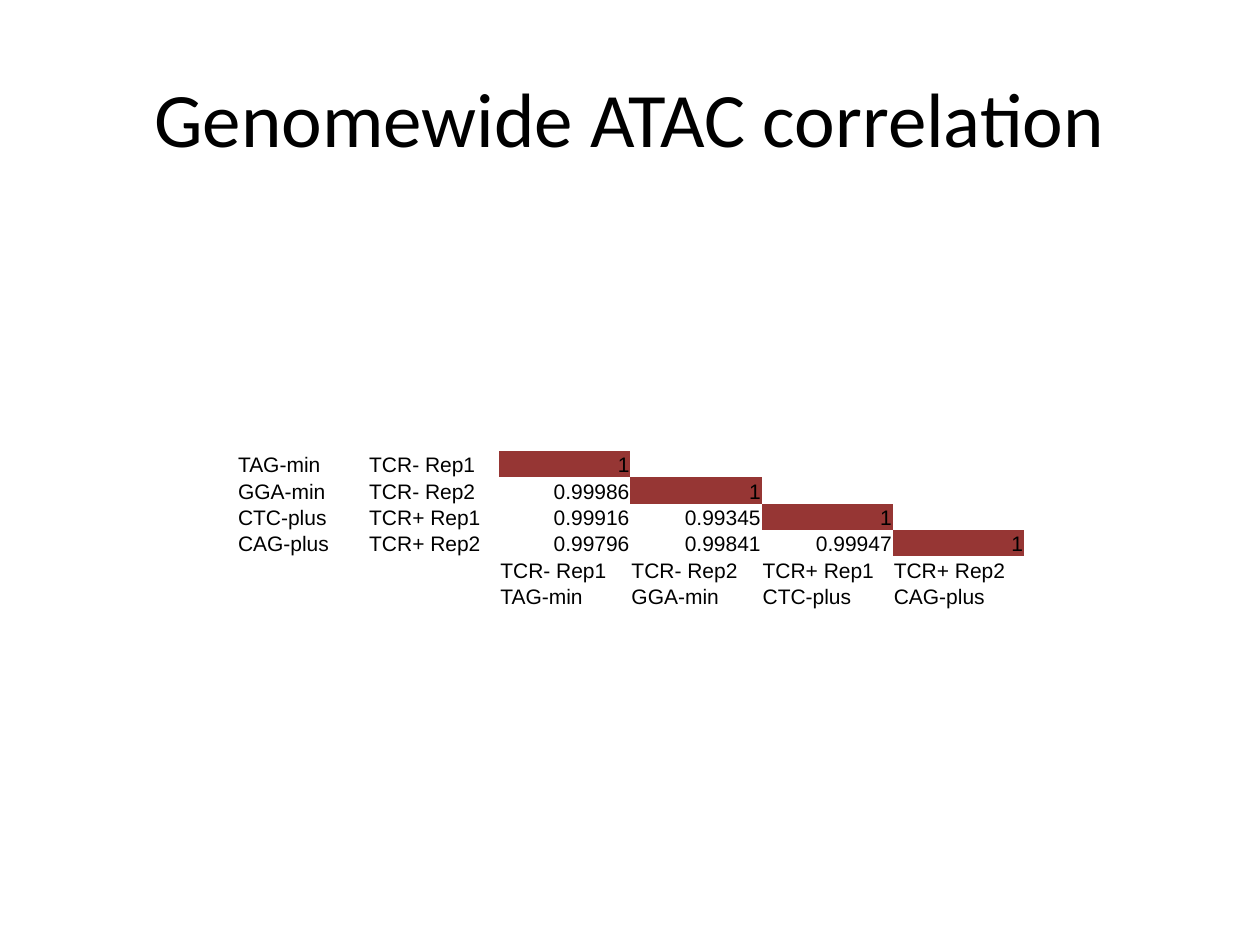
from lxml.etree import SubElement
from pptx import Presentation
from pptx.dml.color import RGBColor
from pptx.enum.text import MSO_ANCHOR as Anchor, PP_ALIGN as Align
from pptx.oxml.ns import qn
from pptx.util import Pt

PX = 914400 // 126
COLORS = {"text": "000000", "diagonal": "963634"}
NO_STYLE_NO_GRID = "{2D5ABB26-0587-4C30-8999-92F81FD0307C}"


def write(frame, text, size, font, align=Align.LEFT):
    para = frame.paragraphs[0]
    para.alignment = align
    span = para.add_run()
    span.text = text
    span.font.size = Pt(size)
    span.font.name = font
    span.font.color.rgb = RGBColor.from_string(COLORS["text"])


deck = Presentation()
deck.slide_width, deck.slide_height = 1260 * PX, 945 * PX
page = deck.slides.add_slide(deck.slide_layouts[6])

# Title
box = page.shapes.add_textbox(63 * PX, 38 * PX, 1134 * PX, 157 * PX)
box.text_frame.word_wrap = True
box.text_frame.vertical_anchor = Anchor.MIDDLE
write(box.text_frame, "Genomewide ATAC correlation", size=44, font="Calibri", align=Align.CENTER)

# Lower triangle of the correlation matrix, labelled at left and below
barcodes = ["TAG-min", "GGA-min", "CTC-plus", "CAG-plus"]
samples = ["TCR- Rep1", "TCR- Rep2", "TCR+ Rep1", "TCR+ Rep2"]
correlations = [
    ["1"],
    ["0.99986", "1"],
    ["0.99916", "0.99345", "1"],
    ["0.99796", "0.99841", "0.99947", "1"],
]
rows = [[code, sample, *values] for code, sample, values in zip(barcodes, samples, correlations)]
rows += [["", "", *samples], ["", "", *barcodes]]

# Table
size = len(rows)
table = page.shapes.add_table(size, size, 237 * PX, 451 * PX, 787 * PX, 158 * PX).table
table.first_row = table.horz_banding = False
table._tbl.tblPr.find(qn("a:tableStyleId")).text = NO_STYLE_NO_GRID

for r, row in enumerate(rows):
    for c in range(size):
        cell = table.cell(r, c)
        cell.margin_left = cell.margin_right = cell.margin_top = PX
        cell.margin_bottom = 0
        cell.vertical_anchor = Anchor.BOTTOM
        text = row[c] if c < len(row) else ""
        if text:
            is_value = r < len(correlations) and c >= 2
            write(cell.text_frame, text, size=12, font="Arial",
                  align=Align.RIGHT if is_value else Align.LEFT)
        else:
            # Keep empty cells from stretching the row
            SubElement(cell.text_frame.paragraphs[0]._p, qn("a:endParaRPr"), sz="1200")
        if text == "1":
            cell.fill.solid()
            cell.fill.fore_color.rgb = RGBColor.from_string(COLORS["diagonal"])
        else:
            cell.fill.background()

deck.save("out.pptx")
